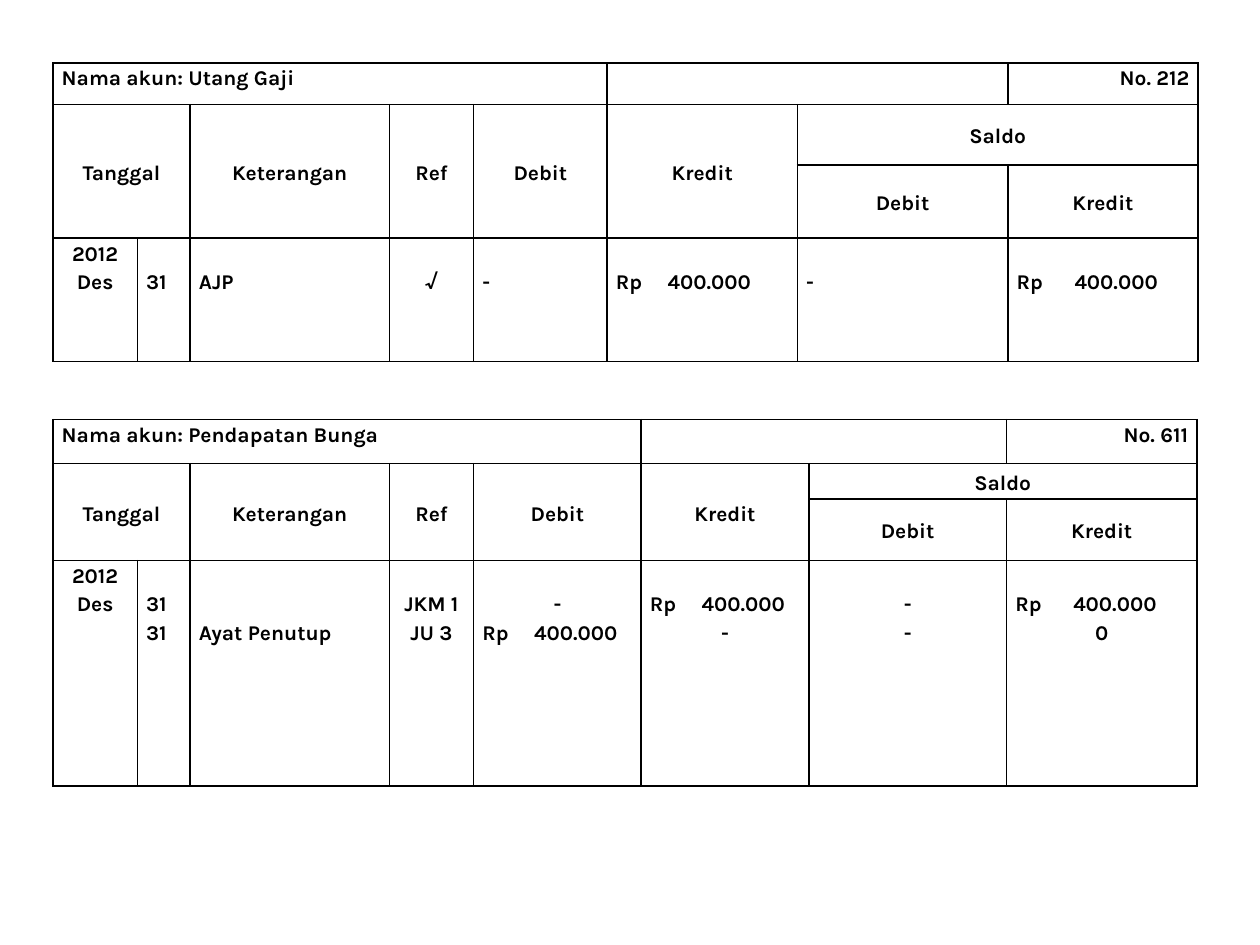
import pptx
import pptx.util
import pptx.dml.color
import pptx.enum.text
from lxml import etree
from pptx.oxml.ns import qn

Inches = pptx.util.Inches
ALIGN = pptx.enum.text.PP_ALIGN
LEFT, CENTER, RIGHT, JUSTIFY = ALIGN.LEFT, ALIGN.CENTER, ALIGN.RIGHT, ALIGN.JUSTIFY
MIDDLE = pptx.enum.text.MSO_ANCHOR.MIDDLE

THEME = {"font": "Karla", "size": 12, "ink": "000000", "border": 1,
         "line_spacing": 1.15, "line_height": 0.225, "margin": 0.07}

# Column headings: (row, column, rows spanned, columns spanned, text)
HEADINGS = [
    (1, 0, 2, 2, "Tanggal"), (1, 2, 2, 1, "Keterangan"), (1, 3, 2, 1, "Ref"),
    (1, 4, 2, 1, "Debit"), (1, 5, 2, 1, "Kredit"), (1, 6, 1, 2, "Saldo"),
    (2, 6, 1, 1, "Debit"), (2, 7, 1, 1, "Kredit"),
]

# Each entry cell: (lines skipped at the top, [(text, alignment), ...])
LEDGERS = [
    {
        "account": "Nama akun: Utang Gaji", "number": "No. 212", "top": 0.5,
        "columns": [0.67, 0.42, 1.58, 0.67, 1.06, 1.51, 1.67, 1.51],
        "rows": [0.33, 0.48, 0.58, 0.98],
        "entries": [
            (0, [("2012", CENTER), ("Des", CENTER)]),
            (1, [("31", JUSTIFY)]),
            (1, [("AJP", JUSTIFY)]),
            (1, [("√", CENTER)]),
            (1, [("-", LEFT)]),
            (1, [("Rp\t400.000", LEFT)]),
            (1, [("-", LEFT)]),
            (1, [("Rp\t400.000", LEFT)]),
        ],
    },
    {
        "account": "Nama akun: Pendapatan Bunga", "number": "No. 611", "top": 3.33,
        "columns": [0.67, 0.42, 1.58, 0.67, 1.33, 1.33, 1.57, 1.51],
        "rows": [0.35, 0.28, 0.49, 1.79],
        "entries": [
            (0, [("2012", CENTER), ("Des", CENTER)]),
            (1, [("31", JUSTIFY), ("31", JUSTIFY)]),
            (2, [("Ayat Penutup", JUSTIFY)]),
            (1, [("JKM 1", CENTER), ("JU 3", CENTER)]),
            (1, [("-", CENTER), ("Rp\t400.000", LEFT)]),
            (1, [("Rp\t400.000", LEFT), ("-", CENTER)]),
            (1, [("-", CENTER), ("-", CENTER)]),
            (1, [("Rp\t400.000", LEFT), ("0", CENTER)]),
        ],
    },
]
TABLE_LEFT = 0.42
BALANCE_COLUMN = 7
AMOUNT_TAB, BALANCE_TAB = 0.41, 0.46


def format_cell(cell):
    """Clear the fill, set the margins and draw all four borders."""
    cell.fill.background()
    cell.margin_left = cell.margin_right = Inches(THEME["margin"])
    cell.margin_top = cell.margin_bottom = 0
    properties = cell._tc.get_or_add_tcPr()
    for position, side in enumerate(("a:lnL", "a:lnR", "a:lnT", "a:lnB")):
        line = etree.Element(qn(side), w=str(pptx.util.Pt(THEME["border"])))
        fill = etree.SubElement(line, qn("a:solidFill"))
        etree.SubElement(fill, qn("a:srgbClr"), val=THEME["ink"])
        properties.insert(position, line)


def write_cell(cell, lines, tab=AMOUNT_TAB):
    """Write one paragraph for each (text, alignment) pair."""
    text_frame = cell.text_frame
    for index, (text, alignment) in enumerate(lines):
        paragraph = text_frame.add_paragraph() if index else text_frame.paragraphs[0]
        paragraph.text = text
        if "\t" in text:
            tabs = etree.SubElement(paragraph._p.get_or_add_pPr(), qn("a:tabLst"))
            etree.SubElement(tabs, qn("a:tab"), pos=str(Inches(tab)), algn="l")
        paragraph.alignment = alignment
        paragraph.line_spacing = THEME["line_spacing"]
        for run in paragraph.runs:
            run.font.name = THEME["font"]
            run.font.size = pptx.util.Pt(THEME["size"])
            run.font.bold = True
            run.font.color.rgb = pptx.dml.color.RGBColor.from_string(THEME["ink"])


def add_ledger(slide, ledger):
    columns, rows = ledger["columns"], ledger["rows"]
    table = slide.shapes.add_table(
        len(rows), len(columns), Inches(TABLE_LEFT), Inches(ledger["top"]),
        Inches(sum(columns)), Inches(sum(rows))).table
    table.first_row = table.horz_banding = False
    for column, width in zip(table.columns, columns):
        column.width = Inches(width)
    for row, height in zip(table.rows, rows):
        row.height = Inches(height)
    for cell in table.iter_cells():
        format_cell(cell)

    # Account name and number
    table.cell(0, 0).merge(table.cell(0, 4))
    table.cell(0, 5).merge(table.cell(0, 6))
    write_cell(table.cell(0, 0), [(ledger["account"], LEFT)])
    write_cell(table.cell(0, BALANCE_COLUMN), [(ledger["number"], RIGHT)])

    # Column headings
    for row, column, height, width, text in HEADINGS:
        cell = table.cell(row, column)
        if height * width > 1:
            cell.merge(table.cell(row + height - 1, column + width - 1))
        cell.vertical_anchor = MIDDLE
        write_cell(cell, [(text, CENTER)])

    # Entries
    for column, (skipped, lines) in enumerate(ledger["entries"]):
        cell = table.cell(3, column)
        cell.margin_top = Inches(skipped * THEME["line_height"])
        write_cell(cell, lines, BALANCE_TAB if column == BALANCE_COLUMN else AMOUNT_TAB)


def main():
    presentation = pptx.Presentation()
    presentation.slide_width = Inches(10)
    presentation.slide_height = Inches(7.5)
    slide = presentation.slides.add_slide(presentation.slide_layouts[6])
    for ledger in LEDGERS:
        add_ledger(slide, ledger)
    presentation.save("out.pptx")


if __name__ == "__main__":
    main()
